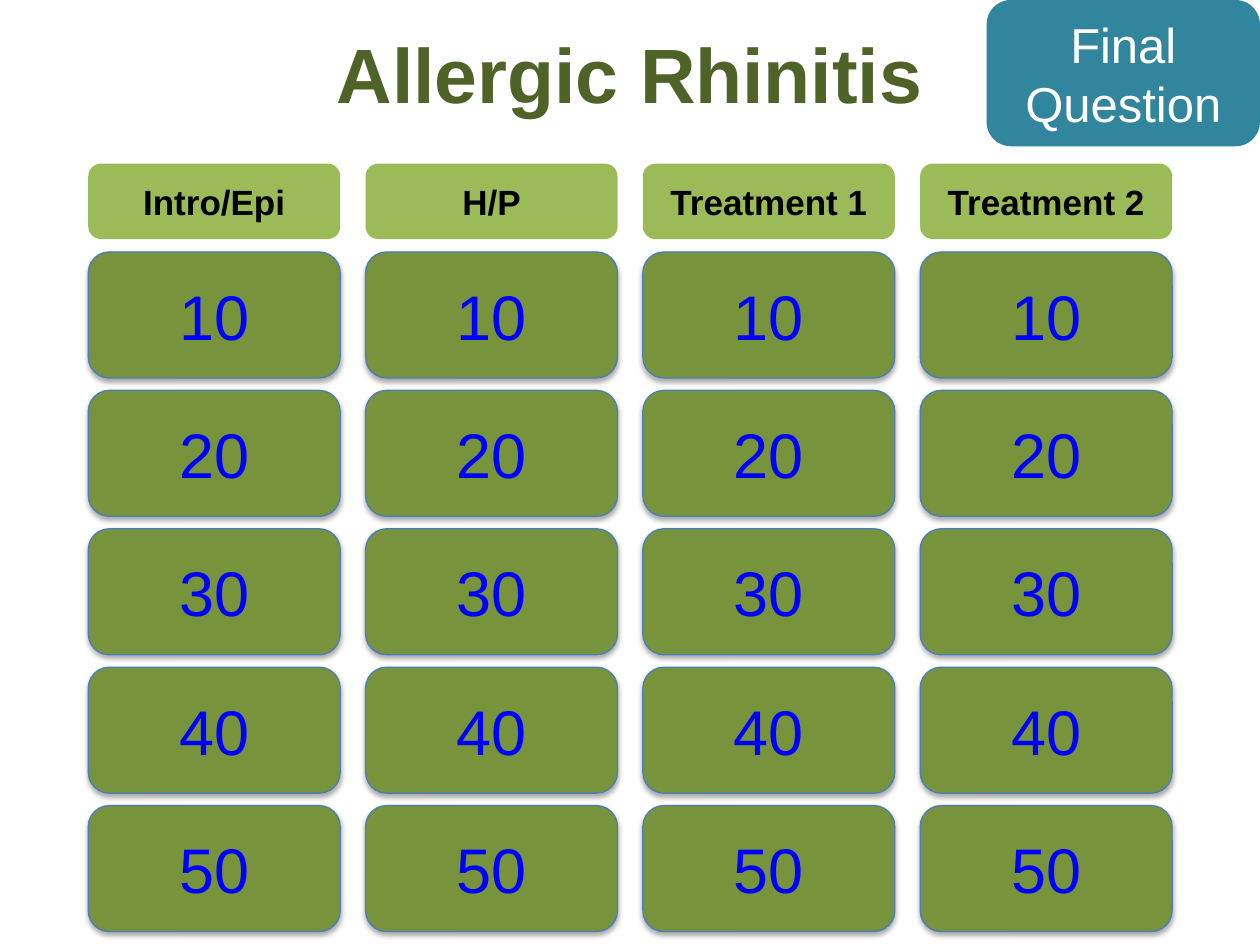
"""Build the Allergic Rhinitis quiz board slide."""
from dataclasses import dataclass

from lxml.etree import SubElement
from pptx import Presentation
from pptx.dml.color import RGBColor
from pptx.enum.shapes import MSO_SHAPE as Preset
from pptx.enum.text import MSO_ANCHOR as Anchor, PP_ALIGN as Align
from pptx.oxml.ns import qn
from pptx.shapes.autoshape import Shape
from pptx.slide import Slide
from pptx.util import Cm, Pt

CATEGORIES = ("Intro/Epi", "H/P", "Treatment 1", "Treatment 2")
POINTS = (10, 20, 30, 40, 50)
BOARD_LEFT, HEADER_TOP, POINTS_TOP = 1.78, 3.3, 5.08
COLUMN_PITCH, ROW_PITCH = 5.59, 2.79


@dataclass(frozen=True)
class Style:
    """Look of one kind of tile or heading."""
    size: int
    color: str
    bold: bool = False
    fill: str = ""
    outline: str = ""


@dataclass(frozen=True)
class Box:
    """Place of an element in centimetres."""
    left: float
    top: float
    width: float
    height: float


TITLE = Style(44, "4F6228", bold=True)
HEADER = Style(20, "000000", bold=True, fill="9BBB59")
FINAL = Style(28, "FFFFFF", fill="31859C")
TILE = Style(36, "0000FF", fill="77933C", outline="4B7EBC")


def rgb(value: str) -> RGBColor:
    """Turn a hex string into a colour."""
    return RGBColor.from_string(value)


def write(shape: Shape, text: str, style: Style) -> None:
    """Put centred, formatted text into a shape."""
    frame = shape.text_frame
    frame.text = text
    frame.word_wrap = True
    frame.vertical_anchor = Anchor.MIDDLE
    paragraph = frame.paragraphs[0]
    paragraph.alignment = Align.CENTER
    font = paragraph.runs[0].font
    formats = {"name": "Arial", "size": Pt(style.size), "bold": style.bold}
    for attribute, value in formats.items():
        setattr(font, attribute, value)
    font.color.rgb = rgb(style.color)


def add_soft_shadow(shape: Shape) -> None:
    """Give a shape a soft shadow straight below it."""
    effects = shape._element.spPr.find(qn("a:effectLst"))
    shadow = SubElement(effects, qn("a:outerShdw"), blurRad=str(Pt(3.1)),
                        dist=str(Pt(1.8)), dir="5400000", rotWithShape="0")
    color = SubElement(shadow, qn("a:srgbClr"), val="000000")
    SubElement(color, qn("a:alpha"), val="35000")


def add_tile(slide: Slide, box: Box, text: str, style: Style) -> None:
    """Draw one rounded tile with its text."""
    tile = slide.shapes.add_shape(Preset.ROUNDED_RECTANGLE, Cm(box.left),
                                  Cm(box.top), Cm(box.width), Cm(box.height))
    tile.fill.solid()
    tile.fill.fore_color.rgb = rgb(style.fill)
    tile.shadow.inherit = False
    if style.outline:
        tile.line.color.rgb = rgb(style.outline)
        tile.line.width = Pt(0.75)
        add_soft_shadow(tile)
    else:
        tile.line.fill.background()
    write(tile, text, style)


def main() -> None:
    """Lay out the board and save it."""
    deck = Presentation()
    deck.slide_width, deck.slide_height = Cm(25.4), Cm(19.05)
    slide = deck.slides.add_slide(deck.slide_layouts[5])

    title = slide.shapes.title
    place = {"left": 1.27, "top": 0, "width": 22.86, "height": 2.95}
    for attribute, value in place.items():
        setattr(title, attribute, Cm(value))
    write(title, "Allergic Rhinitis", TITLE)
    add_tile(slide, Box(19.89, 0, 5.51, 2.95), "Final Question", FINAL)

    for column, category in enumerate(CATEGORIES):
        left = BOARD_LEFT + column * COLUMN_PITCH
        add_tile(slide, Box(left, HEADER_TOP, 5.08, 1.52), category, HEADER)
        for row, points in enumerate(POINTS):
            top = POINTS_TOP + row * ROW_PITCH
            add_tile(slide, Box(left, top, 5.08, 2.54), str(points), TILE)

    deck.save("out.pptx")


if __name__ == "__main__":
    main()
